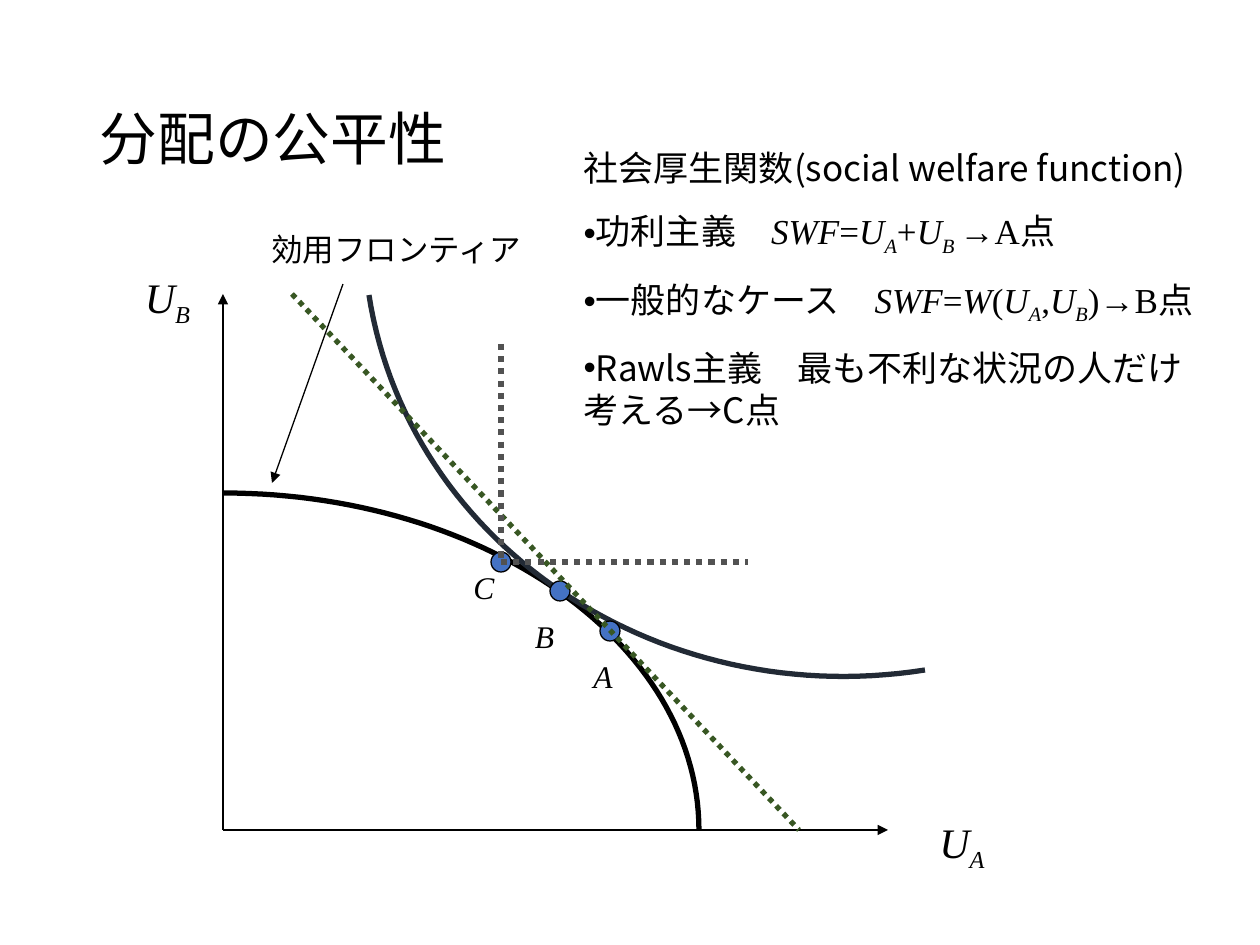
import pptx
import pptx.chart.data
import pptx.dml.color
import pptx.enum.dml
import pptx.enum.shapes
import pptx.enum.text
import pptx.oxml.ns
import pptx.util
from lxml import etree

PX = 914400 / 126
BLACK = pptx.dml.color.RGBColor(0x00, 0x00, 0x00)
NAVY = pptx.dml.color.RGBColor(0x22, 0x2A, 0x35)
BLUE = pptx.dml.color.RGBColor(0x44, 0x72, 0xC4)
GREEN = pptx.dml.color.RGBColor(0x38, 0x57, 0x23)
GRAY = pptx.dml.color.RGBColor(0x52, 0x52, 0x52)
SANS = "Noto Sans CJK JP"
SERIF = "Times New Roman"
DOTTED = pptx.enum.dml.MSO_LINE.ROUND_DOT
qn = pptx.oxml.ns.qn

# Run styles: font, italic, subscript
PLAIN = (SANS, False, False)
MATH = (SERIF, False, False)
VARIABLE = (SERIF, True, False)
INDEX = (SERIF, True, True)


def add_runs(paragraph, runs, size):
    for text, (font_name, italic, subscript) in runs:
        run = paragraph.add_run()
        run.text = text
        run.font.size = pptx.util.Pt(size)
        run.font.italic = italic
        run.font.color.rgb = BLACK
        run.font.name = font_name
        properties = run.font._element
        etree.SubElement(properties, qn("a:ea")).set("typeface", SANS)
        if subscript:
            properties.set("baseline", "-25000")


def add_line(start, end, color, width, dash=None, arrow=False):
    points = [round(value * PX) for value in (*start, *end)]
    line = slide.shapes.add_connector(pptx.enum.shapes.MSO_CONNECTOR.STRAIGHT, *points)
    line.line.color.rgb = color
    line.line.width = pptx.util.Pt(width)
    if dash:
        line.line.dash_style = dash
    if arrow:
        outline = line.line._get_or_add_ln()
        etree.SubElement(outline, qn("a:tailEnd")).set("type", "triangle")
    etree.SubElement(line._element.spPr, qn("a:effectLst"))


presentation = pptx.Presentation()
presentation.slide_width = pptx.util.Inches(10)
presentation.slide_height = pptx.util.Inches(7.5)
slide = presentation.slides.add_slide(presentation.slide_layouts[1])
title, body = slide.placeholders
for placeholder, box in ((title, (87, 50, 1086, 183)), (body, (571, 140, 653, 289))):
    placeholder.left, placeholder.top, placeholder.width, placeholder.height = (
        round(value * PX) for value in box)
    placeholder.text_frame.word_wrap = True
    placeholder.text_frame.auto_size = pptx.enum.text.MSO_AUTO_SIZE.NONE

# Title
title.text_frame.vertical_anchor = pptx.enum.text.MSO_ANCHOR.MIDDLE
paragraph = title.text_frame.paragraphs[0]
paragraph.alignment = pptx.enum.text.PP_ALIGN.LEFT
paragraph.line_spacing = 0.9
add_runs(paragraph, [("分配の公平性", PLAIN)], 33)

# Social welfare functions: a heading, then three bullets
welfare_lines = [
    [("社会厚生関数(social welfare function)", PLAIN)],
    [("功利主義\u3000".replace("\u3000", " "), PLAIN), ("SWF", VARIABLE), ("=", MATH),
     ("U", VARIABLE), ("A", INDEX), ("+", MATH), ("U", VARIABLE), ("B ", INDEX),
     ("→A点", MATH)],
    [("一般的なケース ", PLAIN), ("SWF", VARIABLE), ("=", MATH), ("W", VARIABLE),
     ("(", MATH), ("U", VARIABLE), ("A", INDEX), (",", MATH), ("U", VARIABLE),
     ("B", INDEX), (")→B点", MATH)],
    [("Rawls主義 最も不利な状況の人だけ考える→C点", PLAIN)],
]
welfare_lines = [[(text.replace(" 最", "　最").replace("義 ", "義　").replace("ス ", "ス　"), style)
                  for text, style in runs] for runs in welfare_lines]
for number, runs in enumerate(welfare_lines):
    paragraph = body.text_frame.paragraphs[0] if number == 0 else body.text_frame.add_paragraph()
    paragraph.space_before = pptx.util.Pt(12 if number else 0)
    properties = paragraph._p.get_or_add_pPr()
    properties.set("marL", "0")
    properties.set("indent", "0")
    if number:
        etree.SubElement(properties, qn("a:buChar")).set("char", "•")
    else:
        etree.SubElement(properties, qn("a:buNone"))
    add_runs(paragraph, runs, 20)

# Axes
origin = (223, 830)
add_line(origin, (888, 830), BLACK, 0.75, arrow=True)
add_line(origin, (223, 294), BLACK, 0.75, arrow=True)

# Utility frontier and social indifference curve, as cubic Bézier control points
curves = [
    (BLACK, [(223, 493), (486, 493), (699, 644), (699, 830)]),
    (NAVY, [(369, 295), (408, 544), (658, 712), (925, 670)]),
]
STEPS = 60
for color, controls in curves:
    points = []
    for step in range(STEPS + 1):
        t = step / STEPS
        weights = ((1 - t) ** 3, 3 * t * (1 - t) ** 2, 3 * t ** 2 * (1 - t), t ** 3)
        points.append([round(PX * sum(w * c for w, c in zip(weights, axis)))
                       for axis in zip(*controls)])
    builder = slide.shapes.build_freeform(*points[0])
    builder.add_line_segments(points[1:], close=False)
    curve = builder.convert_to_shape()
    curve.shadow.inherit = False
    curve.fill.background()
    curve.line.color.rgb = color
    curve.line.width = pptx.util.Pt(3)

# Points A, B and C
radius = 10
for x, y in ((610, 631), (560, 591), (501, 562)):
    box = [round(value * PX) for value in (x - radius, y - radius, 2 * radius, 2 * radius)]
    point = slide.shapes.add_shape(pptx.enum.shapes.MSO_SHAPE.OVAL, *box)
    point.shadow.inherit = False
    point.fill.solid()
    point.fill.fore_color.rgb = BLUE
    point.line.color.rgb = BLACK
    point.line.width = pptx.util.Pt(0.75)

# Frontier pointer, utilitarian line and Rawlsian corner
add_line((343, 284), (272, 483), BLACK, 0.75, arrow=True)
add_line((292, 294), (799, 830), GREEN, 3, dash=DOTTED)
corner = (501, 562)
add_line((501, 344), corner, GRAY, 3.5, dash=DOTTED)
add_line(corner, (748, 562), GRAY, 3.5, dash=DOTTED)

# Labels
labels = [
    ((123, 265, 89, 63), 24, [("U", VARIABLE), ("B", INDEX)]),
    ((907, 810, 110, 63), 24, [("U", VARIABLE), ("A", INDEX)]),
    ((253, 224, 287, 50), 18, [("効用フロンティア", PLAIN)]),
    ((581, 651, 39, 50), 18, [("A", VARIABLE)]),
    ((520, 611, 49, 50), 18, [("B", VARIABLE)]),
    ((461, 562, 39, 50), 18, [("C", VARIABLE)]),
]
for box, size, runs in labels:
    label = slide.shapes.add_textbox(*(round(value * PX) for value in box))
    label.text_frame.word_wrap = True
    paragraph = label.text_frame.paragraphs[0]
    paragraph.alignment = pptx.enum.text.PP_ALIGN.CENTER
    add_runs(paragraph, runs, size)

presentation.save("out.pptx")
